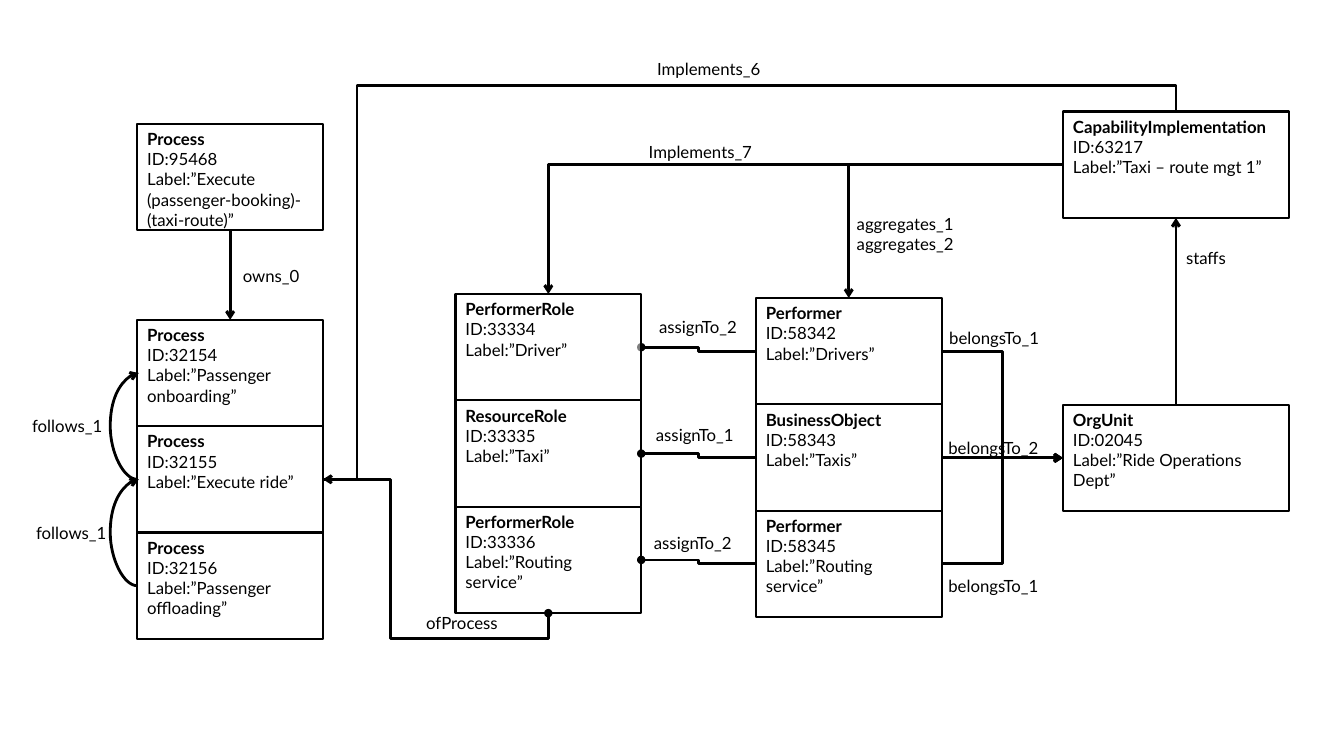
from lxml.etree import SubElement
from pptx import Presentation
from pptx.dml.color import RGBColor
from pptx.enum.shapes import MSO_CONNECTOR, MSO_SHAPE
from pptx.enum.text import MSO_ANCHOR, MSO_AUTO_SIZE, PP_ALIGN
from pptx.oxml.ns import qn
from pptx.util import Cm, Pt

COLORS = {"ink": "000000", "paper": "FFFFFF"}
TOP, LEFT, BOTTOM, RIGHT = range(4)
BOX_WIDTH, WIDE_BOX_WIDTH, BOX_HEIGHT = 4.68, 5.69, 2.68


class Diagram:
    font_name = "Lato"
    font_size = Pt(12)

    def __init__(self, slide):
        self.slide = slide

    def color(self, name):
        return RGBColor.from_string(COLORS[name])

    def set_lines(self, text_frame, lines, bold_first=False):
        text_frame.word_wrap = True
        text_frame.vertical_anchor = MSO_ANCHOR.TOP
        text_frame.text = "\n".join(lines)
        for index, paragraph in enumerate(text_frame.paragraphs):
            paragraph.alignment = PP_ALIGN.LEFT
            for run in paragraph.runs:
                run.font.name = self.font_name
                run.font.size = self.font_size
                run.font.bold = bold_first and index == 0
                run.font.color.rgb = self.color("ink")

    def box(self, left, top, lines, width=BOX_WIDTH, opacity=None):
        shape = self.slide.shapes.add_shape(
            MSO_SHAPE.RECTANGLE, Cm(left), Cm(top), Cm(width), Cm(BOX_HEIGHT))
        shape.shadow.inherit = False
        shape.fill.solid()
        shape.fill.fore_color.rgb = self.color("paper")
        if opacity:
            fill = shape._element.spPr.find(qn("a:solidFill"))
            SubElement(fill[0], qn("a:alpha"), val=str(opacity * 1000))
        shape.line.color.rgb = self.color("ink")
        shape.line.width = Pt(1.5)
        self.set_lines(shape.text_frame, lines, bold_first=True)
        return shape

    def stack(self, left, top, entries, opacities=(None, None, None)):
        return [self.box(left, top + row * BOX_HEIGHT, lines, opacity=opacity)
                for row, (lines, opacity) in enumerate(zip(entries, opacities))]

    def label(self, left, top, width, *lines):
        height = 0.77 + 0.5 * (len(lines) - 1)
        shape = self.slide.shapes.add_textbox(Cm(left), Cm(top), Cm(width), Cm(height))
        self.set_lines(shape.text_frame, lines)
        shape.text_frame.auto_size = MSO_AUTO_SIZE.SHAPE_TO_FIT_TEXT

    def style_connector(self, connector, head):
        connector.line.color.rgb = self.color("ink")
        connector.line.width = Pt(2)
        properties = connector._element.spPr
        SubElement(properties.find(qn("a:ln")), qn("a:headEnd"), type=head)
        SubElement(properties, qn("a:effectLst"))

    def set_geometry(self, connector, preset, adjustments):
        geometry = connector._element.spPr.find(qn("a:prstGeom"))
        geometry.set("prst", preset)
        values = geometry.find(qn("a:avLst"))
        for number, value in enumerate(adjustments, 1):
            name = f"adj{number}"
            SubElement(values, qn("a:gd"), name=name, fmla=f"val {round(value * 100000)}")

    def turn_upright(self, connector):
        start_x, start_y = connector.begin_x, connector.begin_y
        end_x, end_y = connector.end_x, connector.end_y
        middle_x, middle_y = (start_x + end_x) // 2, (start_y + end_y) // 2
        connector.begin_x = middle_x + start_y - middle_y
        connector.begin_y = middle_y - start_x + middle_x
        connector.end_x = middle_x + end_y - middle_y
        connector.end_y = middle_y - end_x + middle_x
        connector._element.spPr.find(qn("a:xfrm")).set("rot", str(90 * 60000))

    def join(self, start, start_side, end, end_side, preset=None, adjustments=(), head="arrow"):
        kind = MSO_CONNECTOR.ELBOW if preset else MSO_CONNECTOR.STRAIGHT
        connector = self.slide.shapes.add_connector(kind, 0, 0, 0, 0)
        connector.begin_connect(start, start_side)
        connector.end_connect(end, end_side)
        if preset:
            self.set_geometry(connector, preset, adjustments)
            if start_side in (TOP, BOTTOM):
                self.turn_upright(connector)
        self.style_connector(connector, head)

    def loop(self, upper, lower):
        offset, bulge = Cm(0.04), 18
        connector = self.slide.shapes.add_connector(
            MSO_CONNECTOR.CURVE, upper.left + offset, upper.top + upper.height // 2,
            lower.left, lower.top + lower.height // 2)
        self.set_geometry(connector, "curvedConnector3", [bulge])
        self.style_connector(connector, "arrow")

    def bring_to_front(self, shape):
        self.slide.shapes._spTree.append(shape._element)


def main():
    presentation = Presentation()
    presentation.slide_width, presentation.slide_height = Cm(33.87), Cm(19.05)
    diagram = Diagram(presentation.slides.add_slide(presentation.slide_layouts[6]))

    owner = diagram.box(3.46, 3.12, [
        "Process", "ID:95468", "Label:”Execute (passenger-booking)-(taxi-route)”"])
    onboarding, ride, offloading = diagram.stack(3.46, 8.06, [
        ["Process", "ID:32154", "Label:”Passenger onboarding”"],
        ["Process", "ID:32155", "Label:”Execute ride”"],
        ["Process", "ID:32156", "Label:”Passenger offloading”"]])
    roles = diagram.stack(11.48, 7.41, [
        ["PerformerRole", "ID:33334", "Label:”Driver”"],
        ["ResourceRole", "ID:33335", "Label:”Taxi”"],
        ["PerformerRole", "ID:33336", "Label:”Routing service”"]], (49, 49, None))
    performers = diagram.stack(19.05, 7.51, [
        ["Performer", "ID:58342", "Label:”Drivers”"],
        ["BusinessObject", "ID:58343", "Label:”Taxis”"],
        ["Performer", "ID:58345", "Label:”Routing service”"]])
    capability = diagram.box(26.79, 2.81, [
        "CapabilityImplementation", "ID:63217", "Label:”Taxi – route mgt 1”"], WIDE_BOX_WIDTH)
    unit = diagram.box(26.79, 10.2, [
        "OrgUnit", "ID:02045", "Label:”Ride Operations Dept”"], WIDE_BOX_WIDTH)

    diagram.join(onboarding, TOP, owner, BOTTOM)
    diagram.loop(onboarding, ride)
    diagram.loop(ride, offloading)
    diagram.join(roles[2], BOTTOM, ride, RIGHT, "bentConnector4", (-0.19, 0.7), "oval")
    for role, performer in zip(roles, performers):
        diagram.join(role, RIGHT, performer, LEFT, "bentConnector3", [0.5], "oval")
        diagram.join(unit, LEFT, performer, RIGHT, "bentConnector3", [0.5])
    for target in (roles[0], performers[0]):
        diagram.join(target, TOP, capability, LEFT, "bentConnector2")
    diagram.join(ride, RIGHT, capability, TOP, "bentConnector4", (0.04, 1.07))
    diagram.join(capability, BOTTOM, unit, TOP)
    diagram.bring_to_front(roles[0])

    for left, top, width, *lines in [
        (5.87, 6.58, 2.34, "owns_0"),
        (0.56, 10.36, 2.59, "follows_1"),
        (0.66, 13.06, 2.64, "follows_1"),
        (10.49, 15.32, 2.82, "ofProcess"),
        (16.1, 3.45, 3.38, "Implements_7"),
        (16.31, 1.35, 3.18, "Implements_6"),
        (16.36, 7.85, 2.82, "assignTo_2"),
        (16.28, 10.59, 2.82, "assignTo_1"),
        (16.23, 13.31, 2.82, "assignTo_2"),
        (23.67, 8.13, 2.82, "belongsTo_1"),
        (23.65, 10.9, 2.82, "belongsTo_2"),
        (23.65, 14.38, 2.82, "belongsTo_1"),
        (29.64, 6.12, 3.18, "staffs"),
        (21.34, 5.26, 3.1, "aggregates_1", "aggregates_2"),
    ]:
        diagram.label(left, top, width, *lines)

    presentation.save("out.pptx")


if __name__ == "__main__":
    main()
